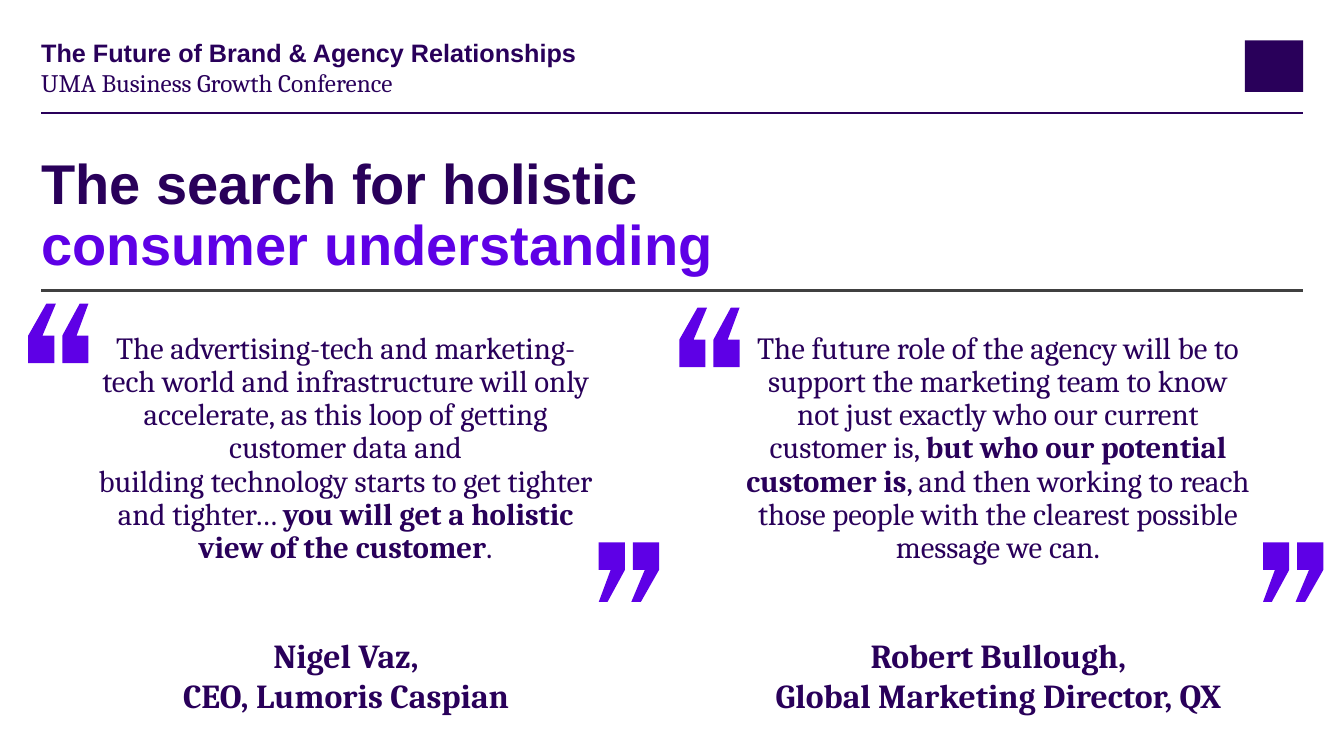
from lxml import etree
from pptx import Presentation
from pptx import util as u
from pptx.dml.color import RGBColor
from pptx.enum import shapes, text
from pptx.oxml.ns import qn

INK, VIOLET, GREY = "29005A", "5E00E6", "404040"
MARGIN, CONTENT_WIDTH = 1.04, 31.8
MARK_WIDTH, MARK_HEIGHT = 152, 150
MARK_STROKES = [
    [(0, 150), (0, 81), (46, 0), (70, 0), (36, 81), (66, 81), (66, 150)],
    [(86, 150), (86, 81), (130, 0), (152, 0), (122, 81), (152, 81), (152, 150)],
]


def color(value):
    return RGBColor.from_string(value)


def add_text(page, area, paragraphs, font, size, bold=None, align=text.PP_ALIGN.LEFT,
             spacing=0.9, anchor=text.MSO_ANCHOR.TOP):
    box = page.shapes.add_textbox(*[u.Cm(length) for length in area])
    frame = box.text_frame
    frame.word_wrap = True
    frame.vertical_anchor = anchor
    frame.margin_left = frame.margin_right = frame.margin_top = frame.margin_bottom = 0
    for index, pieces in enumerate(paragraphs):
        para = frame.paragraphs[0] if index == 0 else frame.add_paragraph()
        para.alignment = align
        para.line_spacing = spacing
        para.font.name = font
        para.font.size = u.Pt(size)
        para.font.bold = bold
        para.font.color.rgb = color(INK)
        for words, strong in pieces:
            span = para.add_run()
            span.text = words
            if strong:
                span.font.bold = True
    return box


deck = Presentation()
deck.slide_width, deck.slide_height = u.Cm(33.87), u.Cm(19.05)
page = deck.slides.add_slide(deck.slide_layouts[6])

for top, line_color in [(2.84, INK), (7.32, GREY)]:
    rule = page.shapes.add_connector(
        shapes.MSO_CONNECTOR.STRAIGHT, u.Cm(MARGIN), u.Cm(top),
        u.Cm(MARGIN + CONTENT_WIDTH), u.Cm(top))
    rule.line.color.rgb = color(line_color)
    rule.line.width = u.Pt(1.5)
    etree.SubElement(rule._element.spPr, qn("a:effectLst"))

emblem = page.shapes.add_shape(
    shapes.MSO_SHAPE.RECTANGLE, u.Cm(31.37), u.Cm(1.02), u.Cm(1.47), u.Cm(1.3))
emblem.shadow.inherit = False
emblem.fill.solid()
emblem.fill.fore_color.rgb = color(INK)
emblem.line.fill.background()

add_text(page, (MARGIN, 1.02, 21, 0.69),
         [[("The Future of Brand & Agency Relationships", False)]], "Arial", 18, True)
add_text(page, (MARGIN, 1.78, 21, 0.69),
         [[("UMA Business Growth Conference", False)]], "Cambria", 18)

title = add_text(page, (MARGIN, 3.94, CONTENT_WIDTH, 3.07),
                 [[("The search for holistic", False)]], "Arial", 40, True)
heading = title.text_frame.paragraphs[0]
heading.add_line_break()
accent = heading.add_run()
accent.text = "consumer understanding"
accent.font.color.rgb = color(VIOLET)

quotes = [
    ((2.41, 8.38, 12.6, 5.92), [
        [("The advertising-tech and marketing-tech world and infrastructure will only "
          "accelerate, as this loop of getting customer data and", False)],
        [("building technology starts to get tighter and tighter… ", False),
         ("you will get a holistic view of the customer", True), (".", False)],
    ]),
    ((18.75, 8.38, 12.8, 6.78), [
        [("The future role of the agency will be to support the marketing team to know "
          "not just exactly who our current customer is, ", False),
         ("but who our potential customer is", True),
         (", and then working to reach those people with the clearest possible "
          "message we can.", False)],
    ]),
]
for area, paragraphs in quotes:
    add_text(page, area, paragraphs, "Cambria", 22, align=text.PP_ALIGN.CENTER)

speakers = [
    (2.08, "Nigel Vaz,", "CEO, Lumoris Caspian"),
    (18.52, "Robert Bullough,", "Global Marketing Director, QX"),
]
for left, name, role in speakers:
    add_text(page, (left, 15.98, 13.28, 2.06), [[(name, False)], [(role, False)]],
             "Cambria", 24, True, text.PP_ALIGN.CENTER, 1.0, text.MSO_ANCHOR.MIDDLE)

quote_marks = [
    (0.71, 7.65, False), (15.09, 13.67, True),
    (17.12, 7.75, False), (31.83, 13.67, True),
]
for left, top, closing in quote_marks:
    strokes = MARK_STROKES
    if closing:
        strokes = [[(MARK_WIDTH - x, MARK_HEIGHT - y) for x, y in stroke]
                   for stroke in MARK_STROKES]
    first, second = strokes
    outline = page.shapes.build_freeform(*first[0], scale=u.Cm(0.01))
    outline.add_line_segments(first[1:], close=True)
    outline.move_to(*second[0])
    outline.add_line_segments(second[1:], close=True)
    mark = outline.convert_to_shape(u.Cm(left), u.Cm(top))
    mark.shadow.inherit = False
    mark.fill.solid()
    mark.fill.fore_color.rgb = color(VIOLET)
    mark.line.fill.background()

deck.save("out.pptx")
